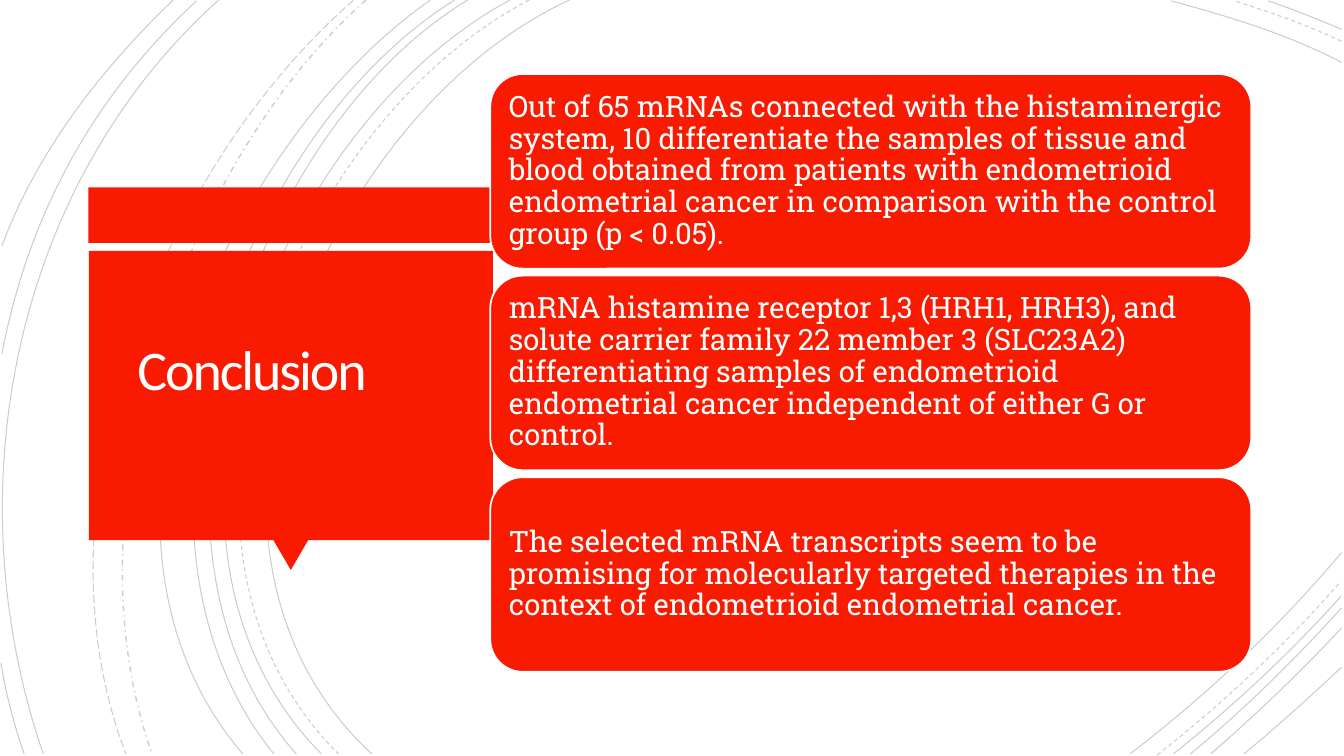
from dataclasses import dataclass

from lxml import etree
from pptx import Presentation
from pptx.dml.color import RGBColor
from pptx.enum import dml, shapes, text
from pptx.oxml import ns
from pptx.shapes.autoshape import Shape
from pptx.util import Pt

RED = RGBColor(0xF8, 0x1B, 0x02)
WHITE = RGBColor(0xFF, 0xFF, 0xFF)
BLACK = RGBColor(0x00, 0x00, 0x00)
KIND = shapes.MSO_SHAPE
DASH = dml.MSO_LINE


@dataclass(frozen=True)
class Arc:
    """A cubic curve: start, two control points and end, in points."""
    xy: tuple[float, ...]
    dash: DASH = DASH.SOLID
    width: float = 0.75


@dataclass(frozen=True)
class Block:
    """A filled preset shape, in points."""
    kind: KIND
    left: float
    top: float
    width: float
    height: float
    rotation: float = 0


ARCS = [
    # Long arcs on the left
    Arc((406.8, 0, 226.8, 82.8, 103, 388.8, 265.7, 538.6)),
    Arc((378, 0, 205.2, 90, 88.6, 386.6, 241.9, 538.6), DASH.DASH),
    Arc((364.3, 0, 194.4, 91.4, 79.2, 386.6, 229.7, 538.6)),
    Arc((334.1, 0, 175.7, 95.8, 79.2, 389.5, 211.7, 538.6)),
    Arc((324.7, 0, 166.3, 99.4, 69.8, 383.8, 195.8, 538.6)),
    Arc((307.4, 0, 156.2, 105.8, 38.2, 380.9, 173.5, 538.6)),
    Arc((261.4, 0, 126.7, 119.5, 46.8, 366.5, 108.7, 538.6), DASH.DASH_DOT, 1),
    Arc((252.7, 0, 113, 121.7, 20.9, 359.3, 90, 538.6), DASH.LONG_DASH),
    Arc((156.2, 0, 7.9, 133.2, -33.1, 352.8, 31, 538.6)),
    Arc((140.4, 0.7, 66.2, 69.1, 20.2, 154.1, 1.4, 252.7)),
    Arc((0.7, 473.8, 4.3, 496.1, 10.1, 517.7, 17.3, 538.6)),
    Arc((123.8, 0, 72, 49.7, 26.6, 108, 1.4, 175.7)),
    # Top right corner
    Arc((958.3, 44.6, 920.2, 24.5, 877, 11.5, 836.6, 0.7)),
    Arc((958.3, 29.5, 933.8, 18, 907.2, 8.6, 882, 0.7), DASH.DASH),
    Arc((958.3, 20.9, 941, 13.7, 923.8, 6.5, 905.8, 0.7)),
    # Bottom right corner
    Arc((807.1, 538.6, 861.8, 496.8, 913.7, 447.8, 958.3, 394.6)),
    Arc((826.6, 539.3, 873.4, 502.6, 918, 460.8, 957.6, 415.4), DASH.DASH),
    Arc((838.1, 538.6, 880.6, 504.7, 921.6, 466.6, 958.3, 425.5)),
    Arc((850.3, 538.6, 888.5, 506.9, 924.5, 471.6, 958.3, 434.2)),
    Arc((864.7, 538.6, 897.1, 510.5, 928.8, 480.2, 958.3, 448.6)),
    Arc((888.5, 538.6, 912.2, 519.1, 935.3, 498.2, 958.3, 476.6)),
]

TITLE_BLOCKS = [
    Block(KIND.RECTANGLE, 63.2, 133.9, 289.4, 39.6),
    Block(KIND.ISOSCELES_TRIANGLE, 195.1, 385.5, 25.2, 21.6, 180),
    Block(KIND.RECTANGLE, 63.4, 179.3, 288.7, 206.6),
]

FINDINGS = [
    "Out of 65 mRNAs connected with the histaminergic system, 10 differentiate "
    "the samples of tissue and blood obtained from patients with endometrioid "
    "endometrial cancer in comparison with the control group (p < 0.05).",
    "mRNA histamine receptor 1,3 (HRH1, HRH3), and solute carrier family 22 "
    "member 3 (SLC23A2) differentiating samples of endometrioid endometrial "
    "cancer independent of either G or control.",
    "The selected mRNA transcripts seem to be promising for molecularly targeted "
    "therapies in the context of endometrioid endometrial cancer.",
]
CARD_TOP, CARD_PITCH = 52.9, 144


def draw_arc(s, arc: Arc) -> None:
    start, *others = [(Pt(x), Pt(y)) for x, y in zip(arc.xy[::2], arc.xy[1::2])]
    builder = s.shapes.build_freeform(*start)
    builder.add_line_segments(others, close=False)
    sp = builder.convert_to_shape()

    # Join the three straight segments into one cubic curve
    segments = list(sp.element.iter(ns.qn("a:lnTo")))
    outline = segments[0].getparent()
    curve = etree.SubElement(outline, ns.qn("a:cubicBezTo"))
    for segment in segments:
        curve.append(segment[0])
        outline.remove(segment)

    sp.shadow.inherit = False
    sp.fill.background()
    sp.line.width = Pt(arc.width)
    sp.line.color.rgb = BLACK
    sp.line.dash_style = arc.dash
    color = next(sp.element.spPr.find(ns.qn("a:ln")).iter(ns.qn("a:srgbClr")))
    etree.SubElement(color, ns.qn("a:alpha"), val="20000")


def draw_block(s, block: Block) -> Shape:
    sp = s.shapes.add_shape(block.kind, Pt(block.left), Pt(block.top),
                            Pt(block.width), Pt(block.height))
    sp.rotation = block.rotation
    sp.shadow.inherit = False
    sp.fill.solid()
    sp.fill.fore_color.rgb = RED
    sp.line.fill.background()
    return sp


def write(sp: Shape, words: str, font: str, size: float, inset: float,
          align: text.PP_ALIGN, spacing: float) -> None:
    tf = sp.text_frame
    tf.text = words
    tf.word_wrap = True
    tf.auto_size = text.MSO_AUTO_SIZE.NONE
    tf.vertical_anchor = text.MSO_ANCHOR.MIDDLE
    tf.margin_left = tf.margin_right = Pt(inset)
    tf.margin_top = tf.margin_bottom = Pt(inset)
    p = tf.paragraphs[0]
    p.alignment = align
    p.line_spacing = spacing
    r = p.runs[0]
    r.font.name = font
    r.font.size = Pt(size)
    r.font.color.rgb = WHITE


def main() -> None:
    prs = Presentation()
    prs.slide_width, prs.slide_height = Pt(960), Pt(540)
    s = prs.slides.add_slide(prs.slide_layouts[5])

    # Background arcs and title panel
    for arc in ARCS:
        draw_arc(s, arc)
    for block in TITLE_BLOCKS:
        draw_block(s, block)

    # Title, raised above its panel
    title = s.shapes.title
    title.left, title.top = Pt(54), Pt(46.8)
    title.width, title.height = Pt(252), Pt(440)
    write(title, "Conclusion", "Calibri", 40, 18, text.PP_ALIGN.CENTER, 0.85)
    run_format = next(title.element.iter(ns.qn("a:rPr")))
    run_format.set("spc", "-150")
    title.element.getparent().append(title.element)

    # Finding cards
    for i, finding in enumerate(FINDINGS):
        card = draw_block(s, Block(KIND.ROUNDED_RECTANGLE, 350.2,
                                   CARD_TOP + i * CARD_PITCH, 543.6, 139))
        card.line.color.rgb = WHITE
        card.line.width = Pt(1.25)
        write(card, finding, "Roboto Slab", 21, 6.5, text.PP_ALIGN.LEFT, 0.9)

    prs.save("out.pptx")


if __name__ == "__main__":
    main()
